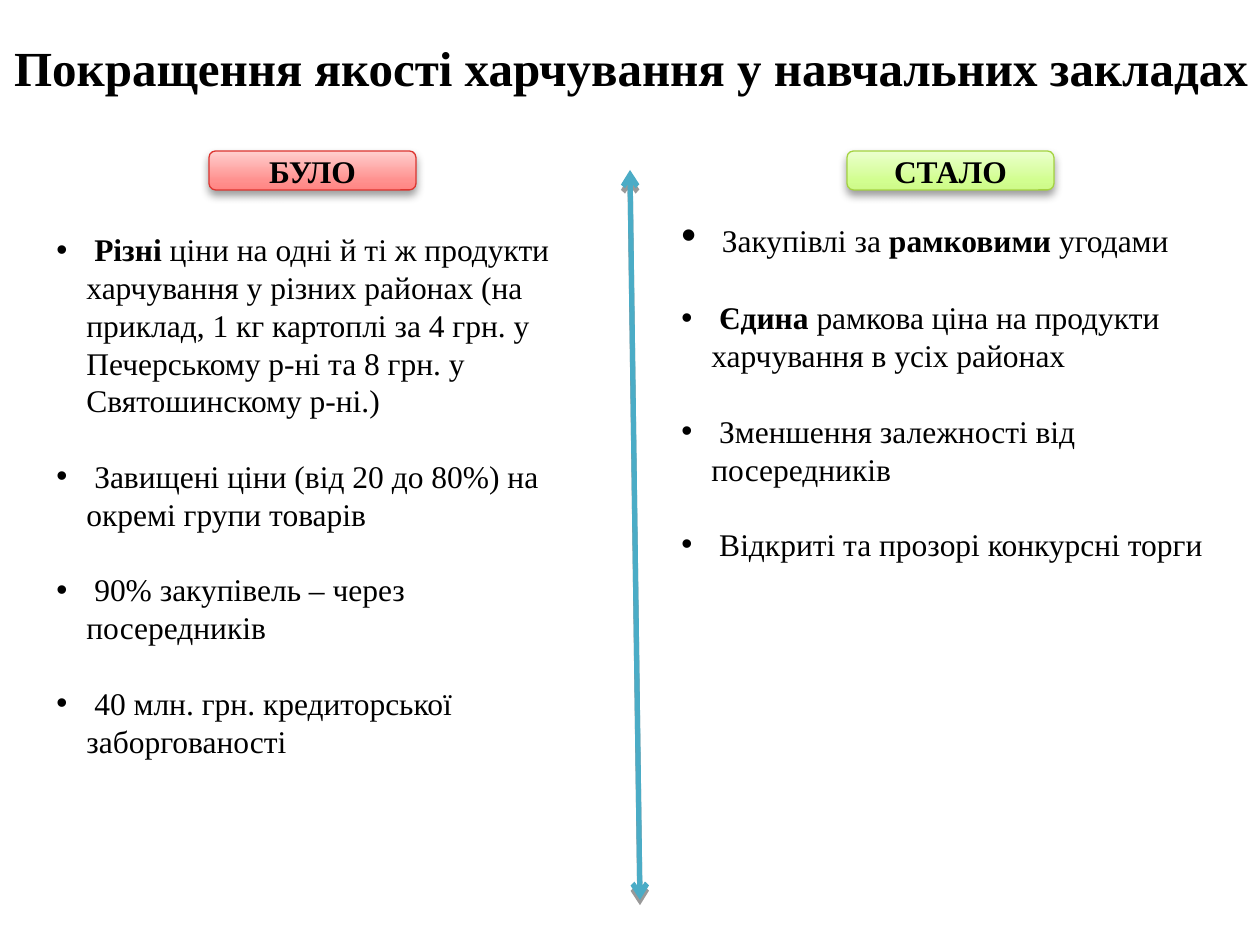
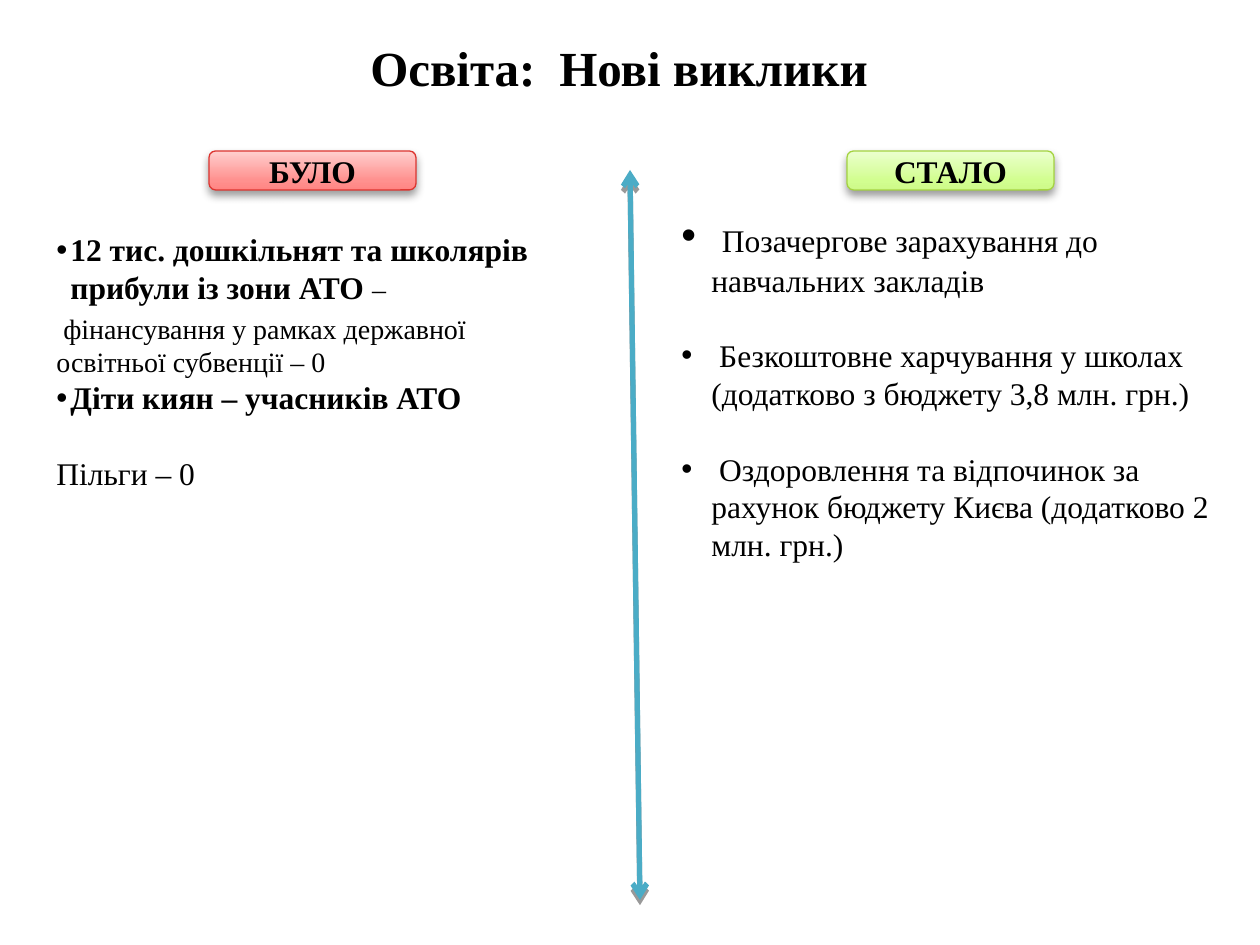
from dataclasses import dataclass

from lxml import etree
from pptx import Presentation
from pptx.dml.color import RGBColor
from pptx.enum.shapes import MSO_CONNECTOR, MSO_SHAPE
from pptx.enum.text import MSO_ANCHOR, MSO_AUTO_SIZE, PP_ALIGN
from pptx.oxml import parse_xml
from pptx.oxml.ns import nsdecls, qn
from pptx.util import Pt

PX = 914400 / 126


@dataclass(frozen=True)
class Theme:
    font: str = "Times New Roman"
    ink: str = "000000"
    divider: str = "4BACC6"
    title: int = 28
    lead: int = 24
    body: int = 18
    small: int = 16
    gap: float = 21.6
    small_gap: float = 3


theme = Theme()
BODY, SMALL, LEAD = theme.body, theme.small, theme.lead
GAP = theme.gap

pills = [
    ("БУЛО", 209, "DD3530", [(0, "FF8583"), (25, "FF918F"), (100, "FFCFCE")]),
    ("СТАЛО", 847, "A4D340", [(0, "CDF989"), (25, "D2FE90"), (100, "EBFFCE")]),
]
columns = [(44, 224, 546), (669, 204, 561)]

slides = [
    ("Покращення якості харчування у навчальних закладах", 10, [
        [
            (30, 0, [(" Різні ", BODY, True),
                     ("ціни на одні й ті ж продукти харчування у різних районах "
                      "(на приклад, 1 кг картоплі за 4 грн. у Печерському р-ні "
                      "та 8 грн. у Святошинскому р-ні.)", BODY, False)]),
            (30, GAP, [(" Завищені ціни (від 20 до 80%) на окремі групи товарів", BODY, False)]),
            (30, GAP, [(" 90% закупівель – через посередників", BODY, False)]),
            (30, GAP, [(" 40 млн. грн. кредиторської заборгованості", BODY, False)]),
        ],
        [
            (30, 0, [(" ", LEAD, False), ("Закупівлі за ", BODY, False),
                     ("рамковими ", BODY, True), ("угодами", BODY, False)]),
            (30, GAP, [(" Єдина ", BODY, True),
                       ("рамкова ціна на продукти харчування в усіх районах", BODY, False)]),
            (30, GAP, [(" Зменшення залежності від посередників", BODY, False)]),
            (30, GAP, [(" Відкриті та прозорі конкурсні торги", BODY, False)]),
        ],
    ]),
    ("Освіта: \tНові виклики", 34, [
        [
            (14, 0, [("12 тис. дошкільнят та школярів прибули із зони АТО ", BODY, True),
                     ("–", SMALL, False)]),
            (0, theme.small_gap,
             [(" фінансування у рамках державної освітньої субвенції – 0", SMALL, False)]),
            (14, 0, [("Діти киян – учасників АТО", BODY, True)]),
            (0, GAP, [("Пільги – 0", BODY, False)]),
        ],
        [
            (30, 0, [(" ", LEAD, False),
                     ("Позачергове зарахування до навчальних закладів", BODY, False)]),
            (30, GAP, [(" Безкоштовне харчування у школах "
                        "(додатково з бюджету 3,8 млн. грн.)", BODY, False)]),
            (30, GAP, [(" Оздоровлення та відпочинок за рахунок бюджету Києва "
                        "(додатково 2 млн. грн.)", BODY, False)]),
        ],
    ]),
]


def add_run(p, text, size, bold):
    r = p.add_run()
    r.text = text
    r.font.name = theme.font
    r.font.size = Pt(size)
    r.font.bold = bold
    r.font.color.rgb = RGBColor.from_string(theme.ink)


def add_shadow(sp, blur):
    sp._element.spPr.append(parse_xml(
        f'<a:effectLst {nsdecls("a")}><a:outerShdw blurRad="{Pt(blur)}" dist="{Pt(3)}" '
        f'dir="5400000" rotWithShape="0"><a:srgbClr val="{theme.ink}">'
        '<a:alpha val="40000"/></a:srgbClr></a:outerShdw></a:effectLst>'))


prs = Presentation()
prs.slide_width = round(1260 * PX)
prs.slide_height = round(945 * PX)

for title, right_inset, texts in slides:
    s = prs.slides.add_slide(prs.slide_layouts[5])

    line = s.shapes.add_connector(
        MSO_CONNECTOR.STRAIGHT, *(round(v * PX) for v in (630, 170, 640, 900)))
    line.line.color.rgb = RGBColor.from_string(theme.divider)
    line.line.width = Pt(3)
    ln = line.line._get_or_add_ln()
    for end in ("a:headEnd", "a:tailEnd"):
        etree.SubElement(ln, qn(end), type="arrow")
    add_shadow(line, 0)

    sp = s.shapes.title
    sp.left, sp.top, sp.width, sp.height = (round(v * PX) for v in (1, -6, 1260, 157))
    tf = sp.text_frame
    tf.word_wrap = True
    tf.auto_size = MSO_AUTO_SIZE.NONE
    tf.vertical_anchor = MSO_ANCHOR.MIDDLE
    tf.margin_left = round(10 * PX)
    tf.margin_right = round(right_inset * PX)
    p = tf.paragraphs[0]
    p.alignment = PP_ALIGN.CENTER
    p.line_spacing = 0.8
    add_run(p, title, theme.title, True)

    for label, left, border, stops in pills:
        sp = s.shapes.add_shape(
            MSO_SHAPE.ROUNDED_RECTANGLE, *(round(v * PX) for v in (left, 151, 207, 39)))
        gs = "".join(f'<a:gs pos="{pos * 1000}"><a:srgbClr val="{color}"/></a:gs>'
                     for pos, color in stops)
        sp._element.spPr.insert(2, parse_xml(
            f'<a:gradFill {nsdecls("a")} rotWithShape="1"><a:gsLst>{gs}</a:gsLst>'
            '<a:lin ang="16200000" scaled="0"/></a:gradFill>'))
        sp.line.color.rgb = RGBColor.from_string(border)
        sp.line.width = Pt(0.75)
        add_shadow(sp, 5.2)
        tf = sp.text_frame
        tf.vertical_anchor = MSO_ANCHOR.MIDDLE
        p = tf.paragraphs[0]
        p.alignment = PP_ALIGN.CENTER
        add_run(p, label, BODY, True)

    for (left, top, width), paragraphs in zip(columns, texts):
        sp = s.shapes.add_textbox(*(round(v * PX) for v in (left, top, width, 560)))
        tf = sp.text_frame
        tf.word_wrap = True
        for i, (indent, before, runs) in enumerate(paragraphs):
            p = tf.add_paragraph() if i else tf.paragraphs[0]
            p.space_before = Pt(before)
            if indent:
                pPr = p._p.get_or_add_pPr()
                pPr.set("marL", str(round(indent * PX)))
                pPr.set("indent", str(round(-indent * PX)))
                etree.SubElement(pPr, qn("a:buFont"), typeface="Arial")
                etree.SubElement(pPr, qn("a:buChar"), char="•")
            for text, size, bold in runs:
                add_run(p, text, size, bold)

prs.save("out.pptx")
